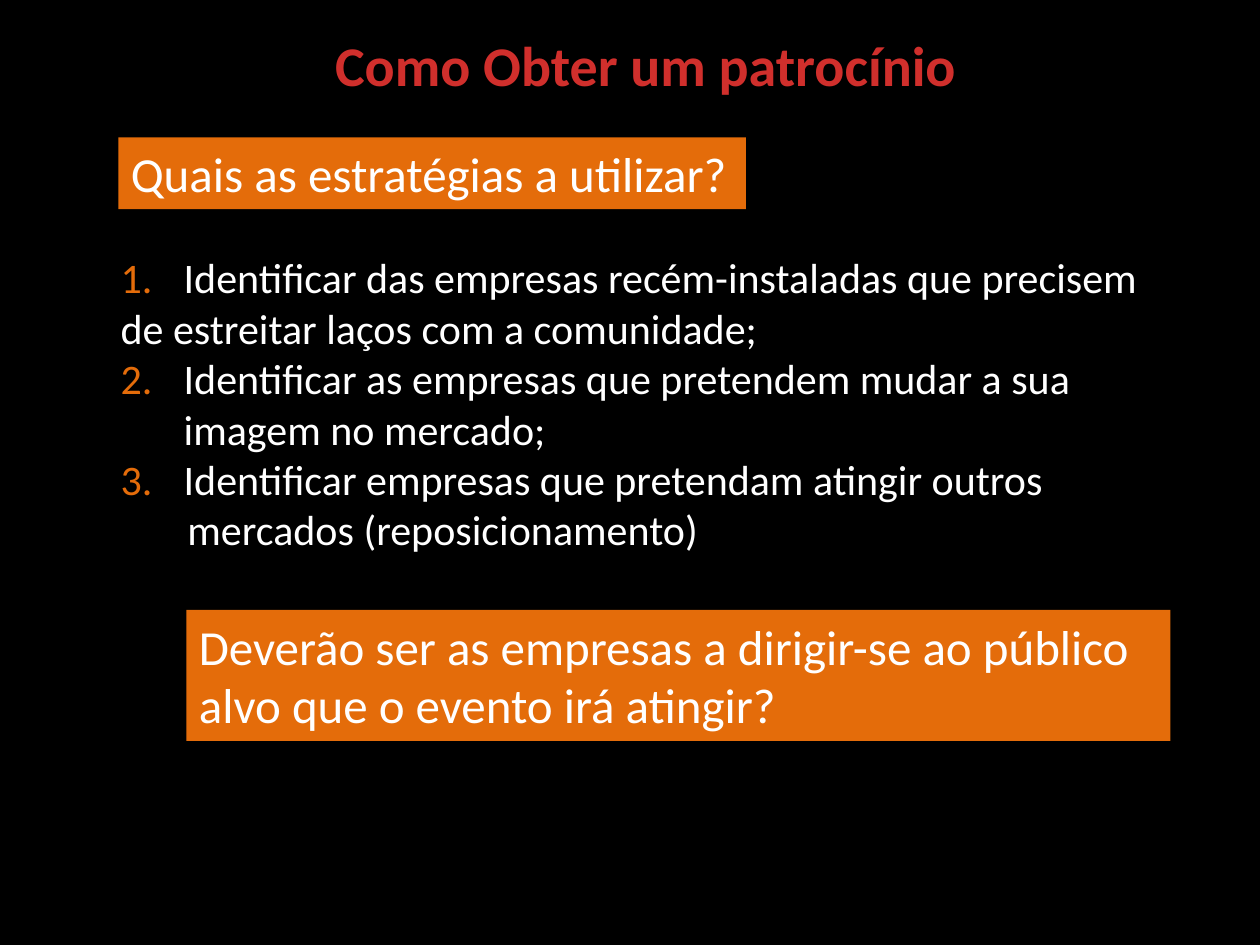
from dataclasses import dataclass
from typing import Optional

import pptx
import pptx.dml.color
import pptx.enum.shapes
import pptx.enum.text
import pptx.oxml.ns
import pptx.util
from lxml import etree
from pptx.util import Inches

FONT = "Calibri"
ORANGE, WHITE, RED, BLACK = "E46C0A", "FFFFFF", "D02F2C", "000000"
ALIGN = pptx.enum.text.PP_ALIGN
ANCHOR = pptx.enum.text.MSO_ANCHOR


@dataclass
class Line:
    text: str
    start: Optional[int] = None
    indent: float = 0


@dataclass
class Box:
    left: float
    top: float
    width: float
    height: float

    def lengths(self):
        return [Inches(v) for v in (self.left, self.top, self.width, self.height)]


def paint(fill, colour: str) -> None:
    fill.solid()
    fill.fore_color.rgb = pptx.dml.color.RGBColor.from_string(colour)


def number(paragraph, start: int) -> None:
    """Give the paragraph an orange automatic number and a hanging indent."""
    properties = paragraph._p.get_or_add_pPr()
    indent = Inches(0.5)
    properties.set("marL", str(indent))
    properties.set("indent", str(-indent))
    qn = pptx.oxml.ns.qn
    colour = etree.SubElement(properties, qn("a:buClr"))
    etree.SubElement(colour, qn("a:srgbClr"), val=ORANGE)
    etree.SubElement(properties, qn("a:buFont"), typeface="+mj-lt")
    numbering = etree.SubElement(properties, qn("a:buAutoNum"), type="arabicPeriod")
    if start > 1:
        numbering.set("startAt", str(start))


def write(shape, lines: list[Line], *, size: float, colour: str = WHITE,
          bold: bool = False, align=ALIGN.LEFT, anchor=ANCHOR.TOP,
          wrap: bool = True) -> None:
    frame = shape.text_frame
    frame.word_wrap = wrap
    frame.vertical_anchor = anchor
    for i, line in enumerate(lines):
        paragraph = frame.add_paragraph() if i else frame.paragraphs[0]
        paragraph.alignment = align
        if line.start:
            number(paragraph, line.start)
        elif line.indent:
            paragraph._p.get_or_add_pPr().set("marL", str(Inches(line.indent)))
        run = paragraph.add_run()
        run.text = line.text
        run.font.name = FONT
        run.font.size = pptx.util.Pt(size)
        run.font.bold = bold
        paint(run.font.fill, colour)


def add_banner(slide, box: Box, text: str, wrap: bool = True) -> None:
    banner = slide.shapes.add_shape(
        pptx.enum.shapes.MSO_SHAPE.RECTANGLE, *box.lengths())
    banner.shadow.inherit = False
    paint(banner.fill, ORANGE)
    banner.line.fill.background()
    write(banner, [Line(text)], size=28, wrap=wrap)


def main() -> None:
    deck = pptx.Presentation()
    deck.slide_width, deck.slide_height = Inches(10), Inches(7.5)
    slide = deck.slides.add_slide(deck.slide_layouts[6])
    paint(slide.background.fill, BLACK)

    title = slide.shapes.add_textbox(*Box(1.09, 0, 8.07, 1.02).lengths())
    write(title, [Line("Como Obter um patrocínio")], size=32, colour=RED,
          bold=True, align=ALIGN.CENTER, anchor=ANCHOR.MIDDLE)

    add_banner(slide, Box(0.94, 1.09, 4.98, 0.57),
               "Quais as estratégias a utilizar?", wrap=False)

    strategies = slide.shapes.add_textbox(*Box(0.86, 1.95, 8.67, 2.52).lengths())
    write(strategies, [
        Line("Identificar das empresas recém-instaladas que precisem", start=1),
        Line("de estreitar laços com a comunidade;"),
        Line("Identificar as empresas que pretendem mudar a sua imagem no mercado;",
             start=2),
        Line("Identificar empresas que pretendam atingir outros", start=2),
        Line("mercados (reposicionamento)", indent=0.53),
    ], size=24)

    add_banner(slide, Box(1.48, 4.84, 7.81, 1.04),
               "Deverão ser as empresas a dirigir-se ao público alvo "
               "que o evento irá atingir?")

    deck.save("out.pptx")


if __name__ == "__main__":
    main()
